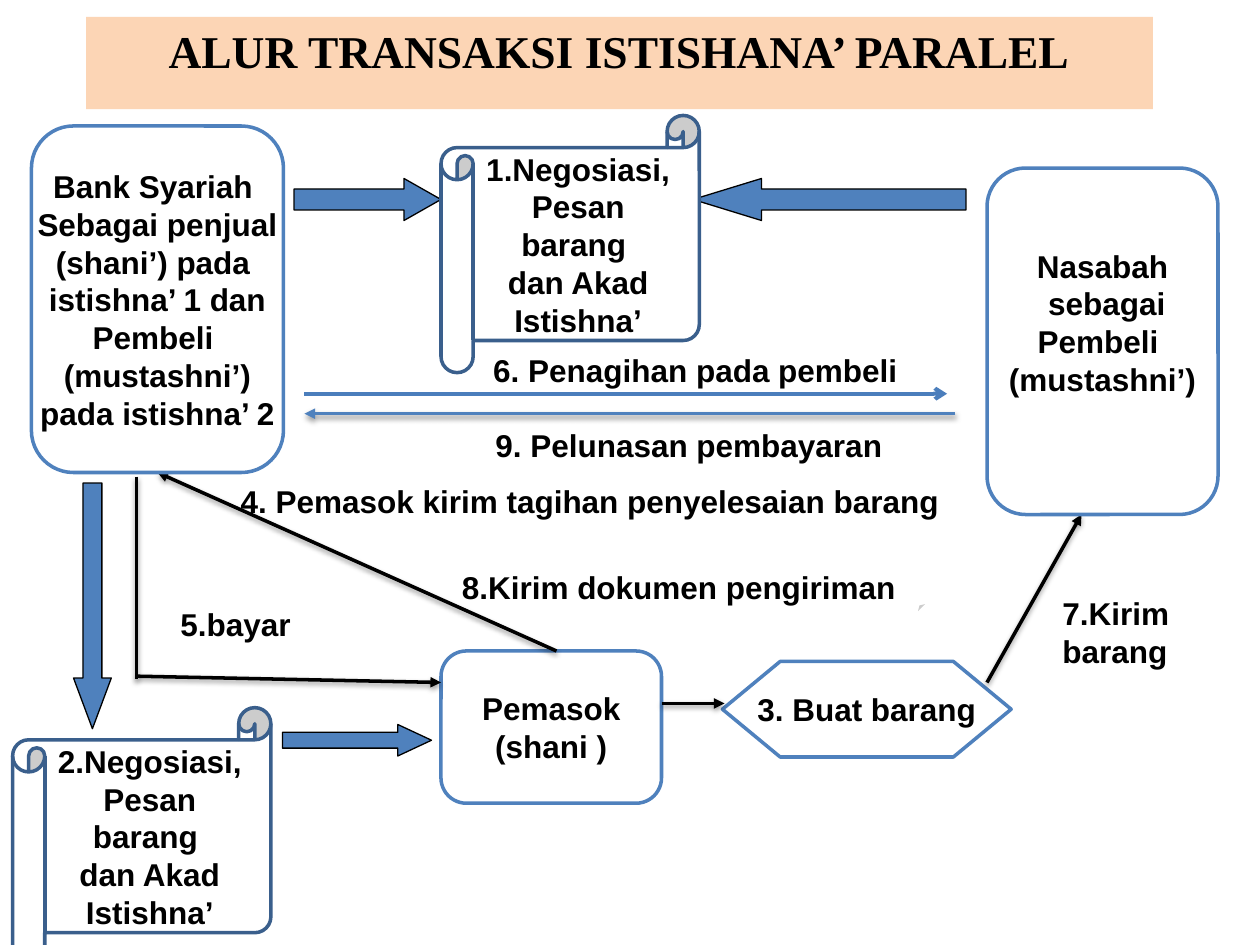
from dataclasses import dataclass

from lxml import etree
from pptx import Presentation
from pptx.dml.color import RGBColor
from pptx.enum.shapes import MSO_CONNECTOR, MSO_SHAPE
from pptx.enum.text import MSO_ANCHOR, PP_ALIGN
from pptx.oxml.ns import qn
from pptx.util import Inches, Pt

RECT, ROUND = MSO_SHAPE.RECTANGLE, MSO_SHAPE.ROUNDED_RECTANGLE
RIGHT, LEFT = MSO_SHAPE.RIGHT_ARROW, MSO_SHAPE.LEFT_ARROW
SCROLL, NOTE = MSO_SHAPE.HORIZONTAL_SCROLL, MSO_SHAPE.FOLDED_CORNER
PREPARATION = MSO_SHAPE.FLOWCHART_PREPARATION
STRAIGHT = MSO_CONNECTOR.STRAIGHT
TOP, MIDDLE = MSO_ANCHOR.TOP, MSO_ANCHOR.MIDDLE
CENTER, START = PP_ALIGN.CENTER, PP_ALIGN.LEFT


@dataclass(frozen=True)
class Theme:
    blue: str = "4F81BD"
    flow_blue: str = "4B7EBC"
    scroll_edge: str = "3A5F8C"
    peach: str = "FCD5B5"
    white: str = "FFFFFF"
    black: str = "000000"
    body_font: str = "Arial"
    title_font: str = "Times New Roman"
    body_size: float = 18
    title_size: float = 26
    edge: float = 2
    thin_edge: float = 0.75


THEME = Theme()
WIDTH, HEIGHT = Inches(10), Inches(7.5)
CELL = WIDTH / 120  # the slide is a grid of 120 columns and 90 rows
HEADER_BOX = (8.2, 1.6, 101.6, 8.8)
SALE_BOX = (0, 11, 120, 38)
SUPPLY_BOX = (0, 45, 120, 45)
CONTRACT = ["Pesan barang ", "dan Akad", "Istishna’"]
CONTRACT_SIZE = (24.6, 24.5)


def grid(*cells):
    return [round(c * CELL) for c in cells]


def within(box, col, row):
    return box[0] + col, box[1] + row


def write(s, lines, align=CENTER, anchor=MIDDLE, wrap=False,
          font=THEME.body_font, size=THEME.body_size):
    tf = s.text_frame
    tf.word_wrap = wrap
    tf.vertical_anchor = anchor
    for i, line in enumerate(lines):
        p = tf.paragraphs[0] if i == 0 else tf.add_paragraph()
        p.text = line
        p.alignment = align
        p.font.name, p.font.size, p.font.bold = font, Pt(size), True
        p.font.color.rgb = RGBColor.from_string(THEME.black)


def add_block(slide, kind, box, at, size, fill=THEME.white, edge=None,
              weight=THEME.edge):
    s = slide.shapes.add_shape(kind, *grid(*within(box, *at), *size))
    s.shadow.inherit = False
    if fill:
        s.fill.solid()
        s.fill.fore_color.rgb = RGBColor.from_string(fill)
    else:
        s.fill.background()
    if edge:
        s.line.color.rgb = RGBColor.from_string(edge)
        s.line.width = Pt(weight)
    else:
        s.line.fill.background()
    return s


def add_party(slide, box, at, size, lines, kind=ROUND):
    s = add_block(slide, kind, box, at, size, edge=THEME.blue)
    write(s, lines)
    return s


def add_contract(slide, box, at, number):
    s = add_block(slide, SCROLL, box, at, CONTRACT_SIZE, edge=THEME.scroll_edge)
    write(s, [f"{number}.Negosiasi,", *CONTRACT], wrap=True)


def add_arrow(slide, kind, box, at, size, head, rotation=0):
    """Block arrow; head is the head's length as a share of its thickness."""
    s = add_block(slide, kind, box, at, size, THEME.blue, THEME.black,
                  THEME.thin_edge)
    s.adjustments[1] = head
    s.rotation = rotation


def add_note(slide, box, at, size, text, fill=None):
    s = add_block(slide, NOTE, box, at, size, fill)
    write(s, [text], wrap=True)


def add_label(slide, box, at, size, *lines):
    s = slide.shapes.add_textbox(*grid(*within(box, *at), *size))
    write(s, lines, START, TOP)


def add_flow(slide, box, start, end, color=THEME.black, weight=THEME.edge,
             head="triangle", shadow=True):
    ends = within(box, *start) + within(box, *end)
    c = slide.shapes.add_connector(STRAIGHT, *grid(*ends))
    c.line.color.rgb = RGBColor.from_string(color)
    c.line.width = Pt(weight)
    sp_pr = c._element.spPr
    if head:
        etree.SubElement(sp_pr.find(qn("a:ln")), qn("a:tailEnd"), type=head)
    effects = etree.SubElement(sp_pr, qn("a:effectLst"))
    if shadow:
        outer = etree.SubElement(
            effects, qn("a:outerShdw"), blurRad=str(Pt(3.1)),
            dist=str(Pt(1.6)), dir="5400000", rotWithShape="0")
        tint = etree.SubElement(outer, qn("a:srgbClr"), val=THEME.black)
        etree.SubElement(tint, qn("a:alpha"), val="38000")


def draw_header(slide, box):
    s = add_block(slide, RECT, box, (0, 0), box[2:], THEME.peach)
    write(s, ["ALUR TRANSAKSI ISTISHANA’ PARALEL"], anchor=TOP, wrap=True,
          font=THEME.title_font, size=THEME.title_size)


def draw_sale(slide, box):
    """Bank and customer, their contract, and billing and payment."""
    add_party(slide, box, (3, 1), (24, 33), [
        "Bank Syariah ", "Sebagai penjual", "(shani’) pada ",
        "istishna’ 1 dan", "Pembeli ", "(mustashni’)", "pada istishna’ 2"])
    buyer = add_party(slide, box, (94, 5), (22, 33), [
        "Nasabah", " sebagai", "Pembeli ", "(mustashni’)"])
    buyer.text_frame.margin_bottom = Inches(0.35)
    add_arrow(slide, RIGHT, box, (28, 6), (14, 4), 0.88)
    add_arrow(slide, LEFT, box, (66, 6), (26, 4), 1.63)
    add_contract(slide, box, (42, 0), 1)
    add_label(slide, box, (45.8, 21.8), (41.3, 4.8), "6. Penagihan pada pembeli")
    add_flow(slide, box, (29, 26.5), (90.2, 26.5), THEME.flow_blue, 2.25,
             "arrow", shadow=False)
    add_flow(slide, box, (91, 28.4), (29, 28.4), THEME.blue)
    add_label(slide, box, (46, 29), (39.6, 4.8), "9. Pelunasan pembayaran")


def draw_supply(slide, box):
    """Supplier, its contract with the bank, production and delivery."""
    add_note(slide, box, (41.2, 9.2), (46.9, 4), "8.Kirim dokumen pengiriman",
             THEME.white)
    add_note(slide, box, (19.3, 1), (74.6, 4),
             "4. Pemasok kirim tagihan penyelesaian barang ")
    add_arrow(slide, RIGHT, box, (-2.9, 10.9), (23.4, 3.6), 1.34, rotation=90)
    add_arrow(slide, RIGHT, box, (26.9, 24), (14.2, 3), 1.07)
    add_party(slide, box, (42, 17), (21, 14.5), ["Pemasok", "(shani )"])
    add_party(slide, box, (68.8, 18), (27.5, 9.1), ["3. Buat barang"],
              PREPARATION)
    add_flow(slide, box, (63, 22), (69, 22))
    add_flow(slide, box, (94, 20), (103, 4))
    add_flow(slide, box, (13, 19.4), (42, 20))
    add_flow(slide, box, (13, 0.4), (13, 19.7), head=None)
    add_flow(slide, box, (53, 17), (15, 0))
    add_label(slide, box, (100, 11), (13.6, 8.5), "7.Kirim", "barang")
    add_label(slide, box, (16, 12), (13.1, 4.8), "5.bayar")
    add_contract(slide, box, (1.2, 22.4), 2)


def main():
    prs = Presentation()
    prs.slide_width, prs.slide_height = WIDTH, HEIGHT
    slide = prs.slides.add_slide(prs.slide_layouts[6])
    draw_supply(slide, SUPPLY_BOX)
    draw_sale(slide, SALE_BOX)
    draw_header(slide, HEADER_BOX)
    prs.save("out.pptx")


if __name__ == "__main__":
    main()
